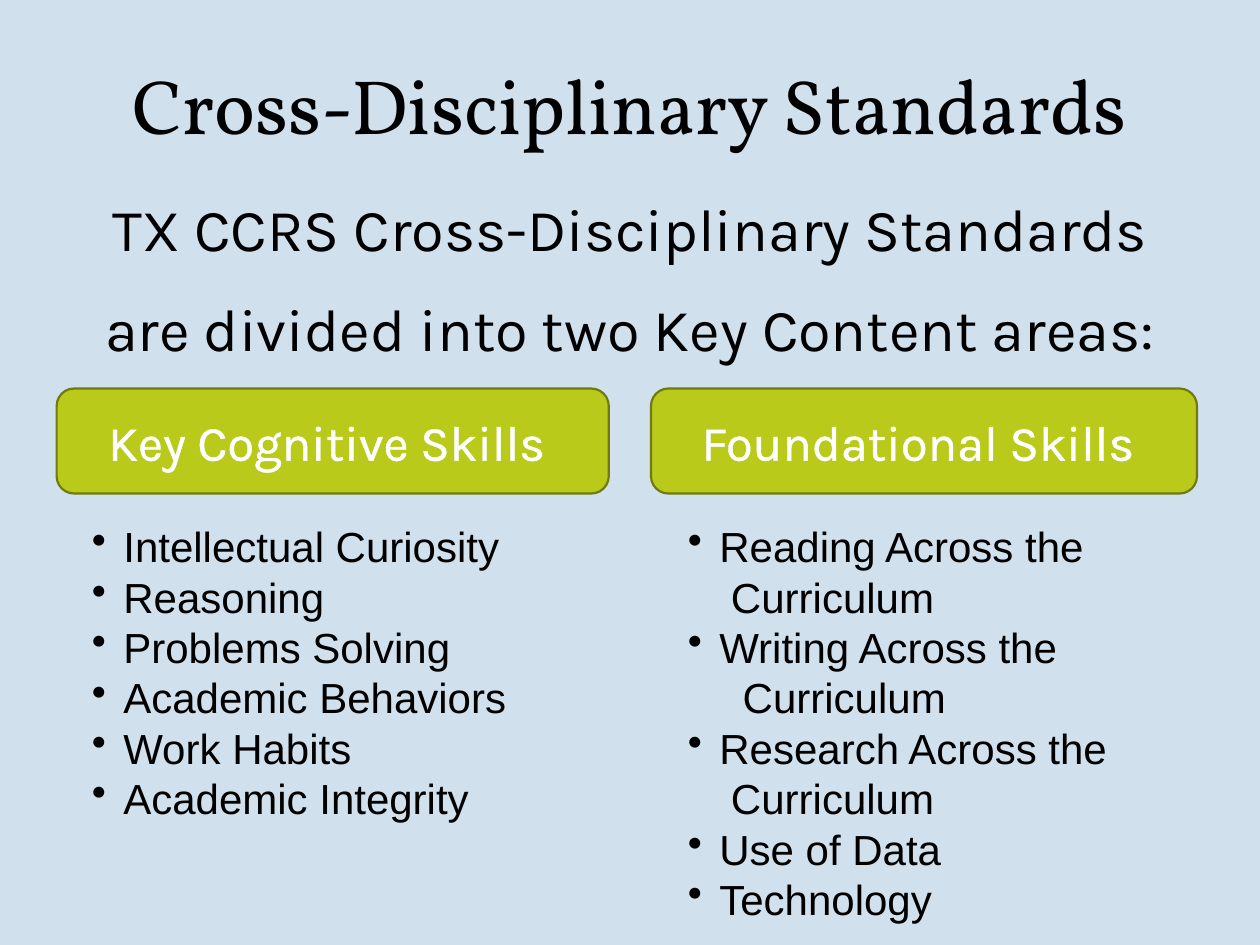
import pptx
import pptx.util
import pptx.dml.color
import pptx.enum.shapes
import pptx.enum.text
import pptx.oxml
import pptx.oxml.ns

Pt = pptx.util.Pt
RGBColor = pptx.dml.color.RGBColor
PP_ALIGN = pptx.enum.text.PP_ALIGN
MSO_ANCHOR = pptx.enum.text.MSO_ANCHOR
MSO_AUTO_SIZE = pptx.enum.text.MSO_AUTO_SIZE
NS = pptx.oxml.ns.nsdecls("a")

SKY = RGBColor(0xD0, 0xE0, 0xEC)
LIME = RGBColor(0xB9, 0xCA, 0x1A)
OLIVE = RGBColor(0x70, 0x7A, 0x10)
BLACK = RGBColor(0, 0, 0)
WHITE = RGBColor(0xFF, 0xFF, 0xFF)

COGNITIVE = [
    ("Intellectual Curiosity", None),
    ("Reasoning", None),
    ("Problems Solving", None),
    ("Academic Behaviors", None),
    ("Work Habits", None),
    ("Academic Integrity", None),
]
FOUNDATIONAL = [
    ("Reading Across the", None),
    ("Curriculum", 1),
    ("Writing Across the", None),
    ("Curriculum", 2),
    ("Research Across the", None),
    ("Curriculum", 1),
    ("Use of Data", None),
    ("Technology", None),
]


def place(sp, box):
    """Move a shape to a box of left, top, width and height in points."""
    sp.left, sp.top, sp.width, sp.height = [Pt(v) for v in box]


def add_run(p, text, font, size, color):
    """Add one formatted run to a paragraph."""
    r = p.add_run()
    r.text = text
    r.font.name = font
    r.font.size = Pt(size)
    r.font.color.rgb = color
    return r


def set_indent(p, left, first, bullet=None):
    """Set the margin, first-line indent and bullet of a paragraph."""
    pPr = p._p.get_or_add_pPr()
    pPr.set("marL", str(Pt(left)))
    pPr.set("indent", str(Pt(first)))
    xml = f'<a:buChar {NS} char="{bullet}"/>' if bullet else f"<a:buNone {NS}/>"
    pPr.append(pptx.oxml.parse_xml(xml))


def fill_title(sp, box):
    """Fill the title placeholder."""
    place(sp, box)
    tf = sp.text_frame
    tf.vertical_anchor = MSO_ANCHOR.MIDDLE
    p = tf.paragraphs[0]
    p.alignment = PP_ALIGN.CENTER
    add_run(p, "Cross-Disciplinary Standards", "Vollkorn", 44, BLACK)


def fill_intro(sp, box):
    """Fill the body placeholder with the introduction."""
    place(sp, box)
    tf = sp.text_frame
    tf.auto_size = MSO_AUTO_SIZE.NONE
    p = tf.paragraphs[0]
    p.alignment = PP_ALIGN.CENTER
    p.line_spacing = 1.4
    p.space_before = Pt(0)
    p.space_after = Pt(12)
    set_indent(p, 0, 0)
    text = "TX CCRS Cross-Disciplinary Standards are divided into two Key Content areas:"
    add_run(p, text, "Karla", 34, BLACK)


def add_heading(s, box, text):
    """Add a rounded heading with outlined lettering."""
    sp = s.shapes.add_shape(
        pptx.enum.shapes.MSO_SHAPE.ROUNDED_RECTANGLE, *[Pt(v) for v in box])
    sp.shadow.inherit = False
    sp.fill.solid()
    sp.fill.fore_color.rgb = LIME
    sp.line.color.rgb = OLIVE
    sp.line.width = Pt(1.25)
    tf = sp.text_frame
    tf.word_wrap = True
    tf.vertical_anchor = MSO_ANCHOR.MIDDLE
    tf.margin_right = Pt(14)
    p = tf.paragraphs[0]
    p.alignment = PP_ALIGN.CENTER
    r = add_run(p, text, "Karla", 28, WHITE)
    r._r.get_or_add_rPr().insert(0, pptx.oxml.parse_xml(
        f'<a:ln {NS} w="{Pt(0.75)}"><a:solidFill><a:srgbClr val="{WHITE}"/>'
        "</a:solidFill></a:ln>"))


def add_list(s, box, items):
    """Add a bulleted list; a number marks a continuation and its indent step."""
    sp = s.shapes.add_textbox(*[Pt(v) for v in box])
    tf = sp.text_frame
    tf.word_wrap = True
    for i, (text, step) in enumerate(items):
        p = tf.add_paragraph() if i else tf.paragraphs[0]
        if step is None:
            set_indent(p, 36, -18, "•")
        else:
            set_indent(p, 36 + 6.67 * step, 0)
        add_run(p, text, "Arial", 24, BLACK)


def main():
    """Build and save the slide."""
    prs = pptx.Presentation()
    prs.slide_width, prs.slide_height = Pt(720), Pt(540)
    s = prs.slides.add_slide(prs.slide_layouts[1])
    s.background.fill.solid()
    s.background.fill.fore_color.rgb = SKY
    fill_title(s.shapes.title, (60, 12, 600, 95))
    fill_intro(s.placeholders[1], (36, 90, 648, 140))
    add_heading(s, (32.4, 222, 315.5, 60), "Key Cognitive Skills")
    add_heading(s, (372, 222, 312, 60), "Foundational Skills")
    add_list(s, (27.4, 294, 317, 181), COGNITIVE)
    add_list(s, (368, 294, 340, 240), FOUNDATIONAL)
    prs.save("out.pptx")


if __name__ == "__main__":
    main()
